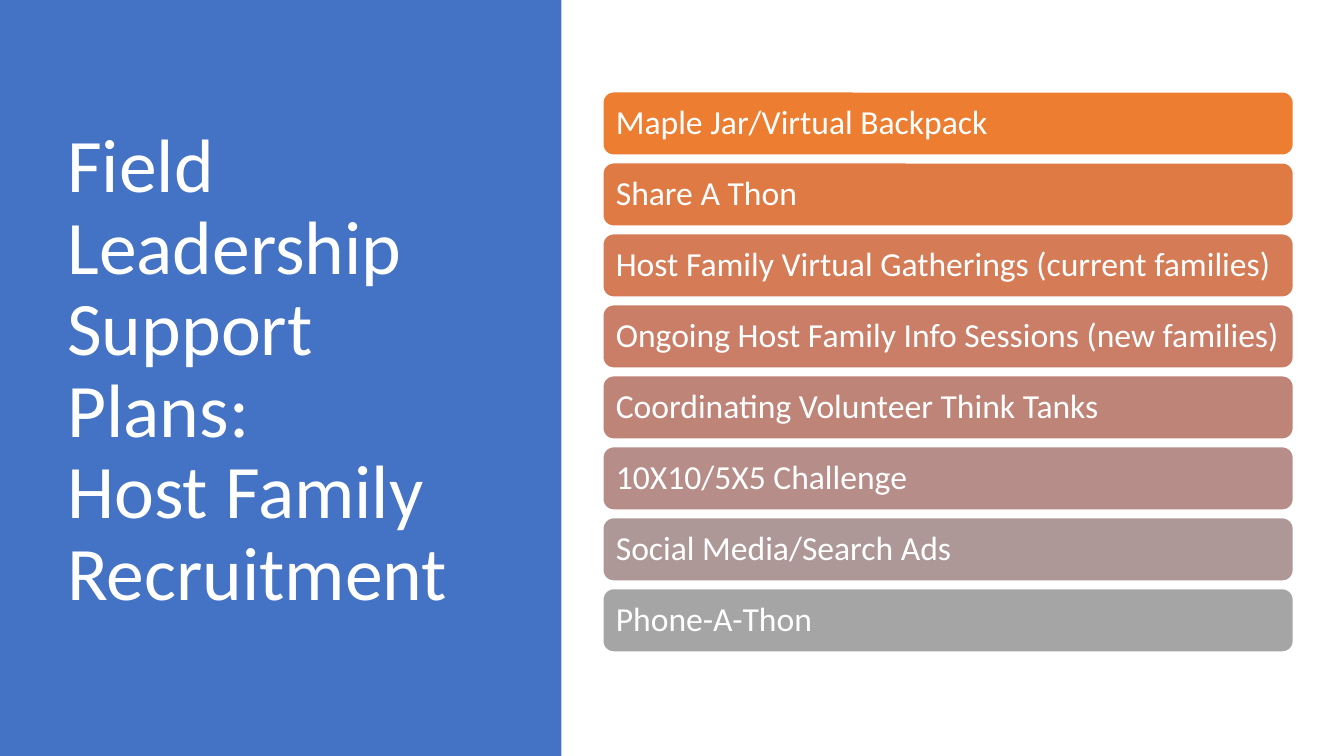
from colorsys import hls_to_rgb, rgb_to_hls
from dataclasses import dataclass

from pptx import Presentation
from pptx.dml.color import RGBColor as RGB
from pptx.enum.shapes import MSO_SHAPE as SHAPE
from pptx.enum.text import MSO_ANCHOR as ANCHOR, PP_ALIGN as ALIGN
from pptx.util import Pt


@dataclass(frozen=True)
class Theme:
    font: str = "Calibri"
    title_size: int = 54
    bar_size: int = 24
    panel: RGB = RGB(0x44, 0x72, 0xC4)
    white: RGB = RGB(0xFF, 0xFF, 0xFF)
    first_bar: RGB = RGB(0xED, 0x7D, 0x31)
    last_bar: RGB = RGB(0xA5, 0xA5, 0xA5)


THEME = Theme()
TITLE = "Field Leadership Support Plans:\vHost Family\vRecruitment"
PLANS = [
    "Maple Jar/Virtual Backpack",
    "Share A Thon",
    "Host Family Virtual Gatherings (current families)",
    "Ongoing Host Family Info Sessions (new families)",
    "Coordinating Volunteer Think Tanks",
    "10X10/5X5 Challenge",
    "Social Media/Search Ads",
    "Phone-A-Thon",
]
BAR_LEFT, BAR_TOP, BAR_WIDTH, BAR_HEIGHT = 430.6, 65.6, 493.2, 45.2
BAR_PITCH = 50.7


def blend(start, end, share):
    """Colour part of the way from start to end, by hue, lightness and saturation."""
    a, b = (rgb_to_hls(*(c / 255 for c in color)) for color in (start, end))
    mixed = hls_to_rgb(*(x + (y - x) * share for x, y in zip(a, b)))
    return RGB(*(round(c * 255) for c in mixed))


def write(sp, text, size, inset=(7.2, 3.6, 7.2, 3.6)):
    tf = sp.text_frame
    tf.word_wrap = True
    tf.vertical_anchor = ANCHOR.MIDDLE
    tf.margin_left, tf.margin_top, tf.margin_right, tf.margin_bottom = map(Pt, inset)
    p = tf.paragraphs[0]
    p.text = text
    p.alignment = ALIGN.LEFT
    p.line_spacing = 0.9
    for r in p.runs:
        r.font.name = THEME.font
        r.font.size = Pt(size)
        r.font.color.rgb = THEME.white


def add_box(s, kind, left, top, width, height, fill, line=None):
    sp = s.shapes.add_shape(kind, Pt(left), Pt(top), Pt(width), Pt(height))
    sp.shadow.inherit = False
    sp.fill.solid()
    sp.fill.fore_color.rgb = fill
    if line is None:
        sp.line.fill.background()
    else:
        sp.line.color.rgb = line
        sp.line.width = Pt(1)
    return sp


def add_title(s, text, left, top, width, height):
    sp = s.shapes.add_textbox(Pt(left), Pt(top), Pt(width), Pt(height))
    write(sp, text, THEME.title_size)


def add_bar(s, text, top, fill):
    sp = add_box(s, SHAPE.ROUNDED_RECTANGLE, BAR_LEFT, top, BAR_WIDTH, BAR_HEIGHT,
                 fill, line=THEME.white)
    write(sp, text, THEME.bar_size, inset=(7.2, 7.2, 3.6, 7.2))


def main():
    prs = Presentation()
    prs.slide_width, prs.slide_height = Pt(960), Pt(540)
    s = prs.slides.add_slide(prs.slide_layouts[6])

    # Title panel
    add_box(s, SHAPE.RECTANGLE, 0, 0, 401, 540, THEME.panel)
    add_title(s, TITLE, 41, 49, 299.5, 433.4)

    # Plan bars, fading from orange to grey
    for i, plan in enumerate(PLANS):
        fill = blend(THEME.first_bar, THEME.last_bar, i / (len(PLANS) - 1))
        add_bar(s, plan, BAR_TOP + i * BAR_PITCH, fill)

    prs.save("out.pptx")


if __name__ == "__main__":
    main()
